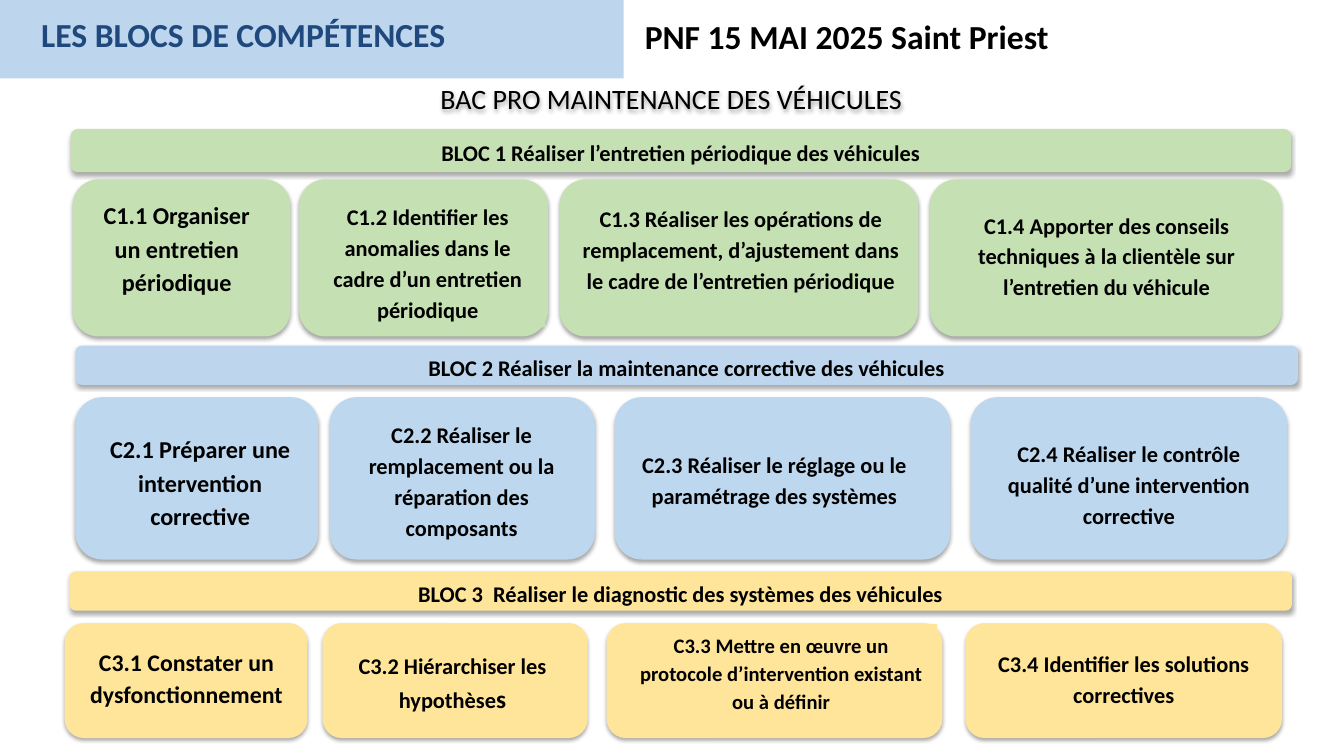
from collections import namedtuple

from pptx import Presentation
from pptx.dml.color import RGBColor
from pptx.enum.shapes import MSO_SHAPE as Preset
from pptx.enum.text import MSO_ANCHOR as Anchor, MSO_AUTO_SIZE as AutoSize, PP_ALIGN as Align
from pptx.oxml import parse_xml
from pptx.oxml.ns import nsdecls
from pptx.util import Cm, Pt

COLORS = {
    "black": "000000",
    "white": "FFFFFF",
    "navy": "1F497D",
    "green": "C5E0B3",
    "header_blue": "BDD6EE",
    "card_blue": "BDD7EE",
    "yellow": "FFE599",
}
FONT = {"name": "Calibri", "bold": True}
CENTERED = {"alignment": Align.CENTER, "line_spacing": 1.15}
FRAME = {"word_wrap": True, "vertical_anchor": Anchor.TOP, "auto_size": AutoSize.SHAPE_TO_FIT_TEXT}

# All boxes are in centimetres.
Box = namedtuple("Box", "left top width height")
# label is relative to the top left corner of its card
Card = namedtuple("Card", "left width label size runs")
Bloc = namedtuple("Bloc", "title bar bar_color card_color top height cards")

BLOCS = [
    Bloc("BLOC 1 Réaliser l’entretien périodique des véhicules",
         Box(1.78, 3.25, 30.76, 1.09), "green", "green", 4.52, 3.96, [
             Card(1.83, 5.49, Box(0.2, 0.3, 4.85, 2.77), 17.3,
                  ["C1.1 Organiser un entretien périodique"]),
             Card(7.54, 6.27, Box(0.28, 0.38, 5.92, 3.35), 16,
                  ["C1.2 Identifier les anomalies dans le cadre d’un entretien périodique"]),
             Card(14.1, 9.04, Box(0.1, 0.43, 8.94, 2.57), 16,
                  ["C1.3 Réaliser les opérations de remplacement, d’ajustement "
                   "dans le cadre de l’entretien périodique"]),
             Card(23.44, 8.86, Box(0.54, 0.59, 7.82, 2.57), 16,
                  ["C1.4 Apporter des conseils techniques à la clientèle "
                   "sur l’entretien du véhicule"]),
         ]),
    Bloc("BLOC 2 Réaliser la maintenance corrective des véhicules",
         Box(1.9, 8.71, 30.81, 0.99), "header_blue", "card_blue", 10.01, 4.09, [
             Card(1.9, 6.12, Box(0.44, 0.71, 5.41, 2.77), 17.3,
                  ["C2.1 Préparer une intervention corrective"]),
             Card(8.31, 6.68, Box(0.25, 0.38, 6.15, 3.35), 16,
                  ["C2.2 Réaliser le remplacement ou la réparation des composants"]),
             Card(15.49, 8.46, Box(0.33, 1.14, 7.39, 1.78), 16,
                  ["C2.3 Réaliser le réglage ou le paramétrage des systèmes"]),
             Card(24.46, 7.98, Box(0.46, 0.86, 7.06, 2.57), 16,
                  ["C2.4 Réaliser le contrôle qualité d’une intervention corrective"]),
         ]),
    Bloc("BLOC 3  Réaliser le diagnostic des systèmes des véhicules",
         Box(1.75, 14.4, 30.81, 0.99), "yellow", "yellow", 15.7, 2.9, [
             Card(1.63, 6.12, Box(0.1, 0.38, 5.94, 1.88), 17,
                  ["C3.1 Constater un dysfonctionnement"]),
             Card(8.13, 6.68, Box(0.2, 0.51, 6.15, 1.88), 16,
                  ["C3.2 Hiérarchiser les hypothèse", ("s", 18)]),
             Card(15.29, 8.46, Box(0.46, 0.02, 7.87, 2.44), 14.7,
                  ["C3.3 Mettre en œuvre un protocole d’intervention existant ou à définir"]),
             Card(24.33, 7.98, Box(0.46, 0.45, 7.06, 1.88), 16,
                  ["C3.4 Identifier les solutions correctives"]),
         ]),
]


def rgb(color):
    return RGBColor.from_string(COLORS[color])


def apply_format(target, values):
    for attribute, value in values.items():
        setattr(target, attribute, value)


def add_soft_shadow(shape):
    shape.shadow.inherit = False
    effects = shape._element.spPr.find("{*}effectLst")
    effects.append(parse_xml(
        f'<a:outerShdw {nsdecls("a")} blurRad="{Pt(3.1)}" dist="{Pt(1.8)}" dir="5400000" '
        'rotWithShape="0"><a:srgbClr val="000000"><a:alpha val="35000"/></a:srgbClr>'
        '</a:outerShdw>'))


def add_panel(shapes, preset, box, color):
    panel = shapes.add_shape(preset, *map(Cm, box))
    panel.shadow.inherit = False
    panel.fill.solid()
    panel.fill.fore_color.rgb = rgb(color)
    panel.line.fill.background()
    return panel


def write(shape, runs, size, color="black", paragraph_format=CENTERED, frame=None, font=None):
    """Fill a shape with one paragraph; a run given as (words, size) has its own size."""
    apply_format(shape.text_frame, FRAME | (frame or {}))
    paragraph = shape.text_frame.paragraphs[0]
    apply_format(paragraph, paragraph_format)
    for part in runs:
        words, points = part if isinstance(part, tuple) else (part, size)
        run = paragraph.add_run()
        run.text = words
        apply_format(run.font, FONT | {"size": Pt(points)} | (font or {}))
        run.font.color.rgb = rgb(color)


def add_header(slide, box):
    """Place the coloured band, the event beside it and the diploma below."""
    add_panel(slide.shapes, Preset.RECTANGLE, box, "header_blue")
    left_aligned = {"alignment": Align.LEFT}

    event_box = Box(box.left + box.width + 0.28, box.top + 0.28, 10.74, 1.27)
    event = add_panel(slide.shapes, Preset.RECTANGLE, event_box, "white")
    write(event, ["PNF 15 MAI 2025 Saint Priest"], 24, paragraph_format=left_aligned)

    title_box = Box(box.left + 0.79, box.top + 0.23, 16.94, 1.27)
    title = slide.shapes.add_textbox(*map(Cm, title_box))
    write(title, ["LES BLOCS DE COMPÉTENCES"], 24, "navy", left_aligned)

    diploma_box = Box(box.left + 7.85, box.top + box.height - 0.05, 18.14, 1.12)
    diploma = slide.shapes.add_textbox(*map(Cm, diploma_box))
    write(diploma, ["BAC PRO MAINTENANCE DES VÉHICULES"], 20,
          paragraph_format={"alignment": Align.CENTER}, font={"bold": False})
    add_soft_shadow(diploma)


def add_card(slide, box, card, color):
    group = slide.shapes.add_group_shape()
    add_soft_shadow(add_panel(group.shapes, Preset.FLOWCHART_ALTERNATE_PROCESS, box, color))
    label_box = card.label._replace(left=box.left + card.label.left, top=box.top + card.label.top)
    label = add_panel(group.shapes, Preset.RECTANGLE, label_box, color)
    write(label, card.runs, card.size)


def add_bloc(slide, bloc):
    bar = add_panel(slide.shapes, Preset.FLOWCHART_ALTERNATE_PROCESS, bloc.bar, bloc.bar_color)
    add_soft_shadow(bar)
    write(bar, [bloc.title], 16,
          frame={"vertical_anchor": Anchor.MIDDLE, "auto_size": AutoSize.NONE})
    for card in bloc.cards:
        add_card(slide, Box(card.left, bloc.top, card.width, bloc.height), card, bloc.card_color)


def main():
    deck = Presentation()
    deck.slide_width, deck.slide_height = Cm(33.87), Cm(19.05)
    slide = deck.slides.add_slide(deck.slide_layouts[6])
    add_header(slide, Box(0, 0, 15.72, 1.98))
    for bloc in BLOCS:
        add_bloc(slide, bloc)
    deck.save("out.pptx")


if __name__ == "__main__":
    main()
